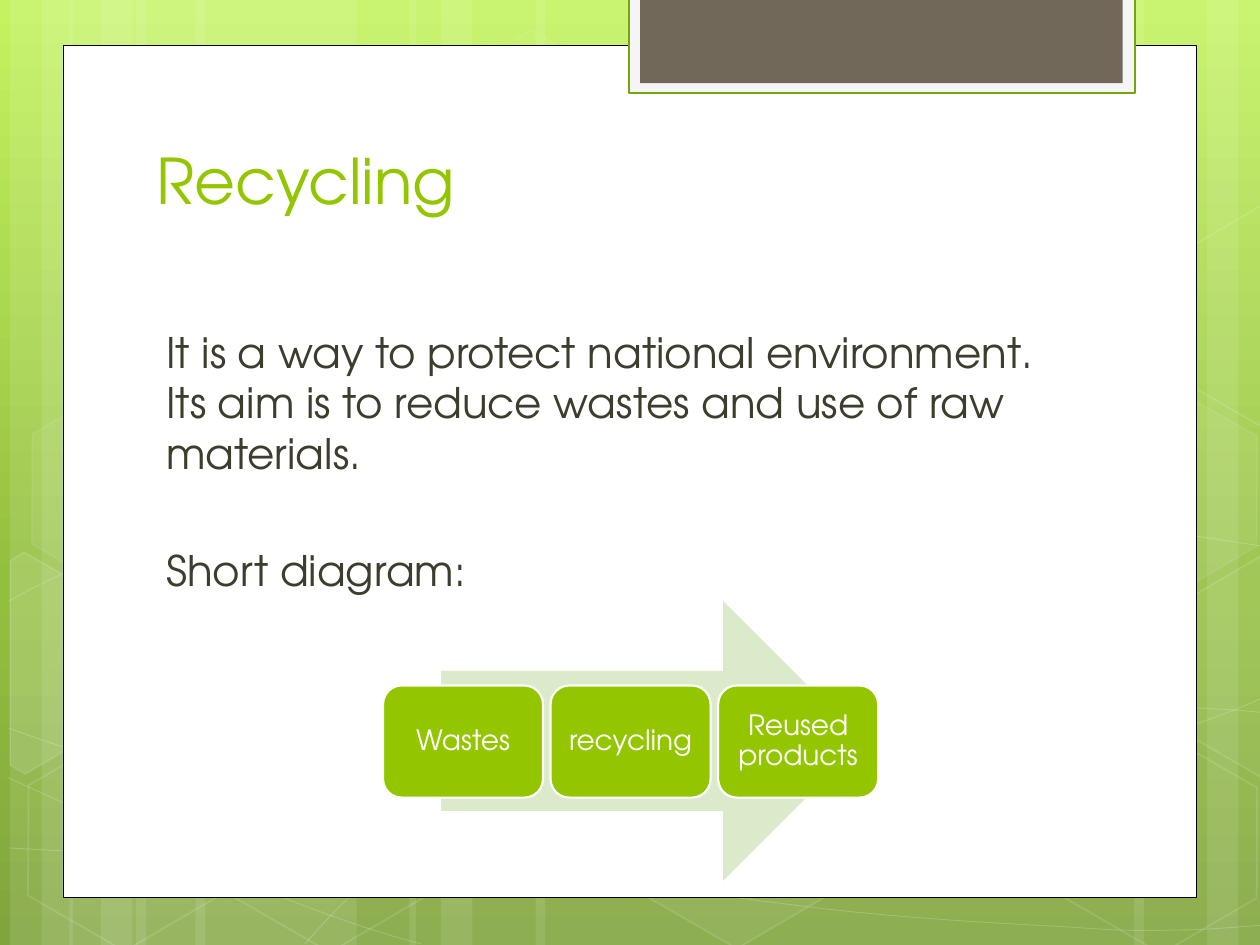
from copy import deepcopy
from math import cos, radians, sin

from lxml import etree
from pptx import Presentation
from pptx.dml.color import RGBColor
from pptx.enum.shapes import MSO_SHAPE
from pptx.enum.text import MSO_ANCHOR, MSO_AUTO_SIZE, PP_ALIGN
from pptx.oxml.ns import qn
from pptx.util import Inches, Pt

RECT, HEX = MSO_SHAPE.RECTANGLE, MSO_SHAPE.HEXAGON
ROUND, ARROW = MSO_SHAPE.ROUNDED_RECTANGLE, MSO_SHAPE.RIGHT_ARROW
TOP, MIDDLE = MSO_ANCHOR.TOP, MSO_ANCHOR.MIDDLE
LEFT, CENTER = PP_ALIGN.LEFT, PP_ALIGN.CENTER
NO_FIT = MSO_AUTO_SIZE.NONE

WHITE = RGBColor(0xFF, 0xFF, 0xFF)
BLACK = RGBColor(0, 0, 0)
GREEN = RGBColor(0x94, 0xC6, 0x00)
PALE = RGBColor(0xDC, 0xEA, 0xCC)
EDGE = RGBColor(0x74, 0xA5, 0x10)
GRAY = RGBColor(0xF5, 0xF5, 0xF5)
BROWN = RGBColor(0x71, 0x68, 0x5A)
INK = RGBColor(0x3E, 0x3D, 0x2D)
SKY = [(0, RGBColor(0xC3, 0xF3, 0x5F)), (0.62, RGBColor(0x93, 0xBF, 0x3F)),
       (1, RGBColor(0x81, 0xA5, 0x3E))]

STRIPES = [(1.08, 1.75), (0.08, 0.5), (0.33, 0.83), (1.55, 1.75), (0.55, 0.5),
           (0.8, 0.83), (7.33, 1.75), (9.58, 0.5), (9, 0.83), (4.25, 3.08),
           (3.25, 0.5), (3.5, 0.83)]
CURVES = [
    ([(0.07, 6.73), (0.61, 6.76), (1.15, 6.79), (1.9, 6.78), (2.65, 6.77),
      (3.58, 6.75), (4.58, 6.65), (5.58, 6.55), (7, 6.36), (7.92, 6.17),
      (8.83, 5.98), (9.77, 5.68), (10.07, 5.51)], "CCCC"),
    ([(0.07, 4.77), (0.36, 4.61), (0.65, 4.46), (1.21, 4.31), (1.78, 4.16),
      (2.59, 3.94), (3.47, 3.87), (4.36, 3.8), (5.44, 3.79), (6.54, 3.87),
      (7.64, 3.95), (9.47, 4.26), (10.07, 4.34)], "CCCC"),
    ([(0.06, 6.17), (1.27, 6.72), (2.47, 7.27), (3.34, 7.49)], "C"),
    ([(0.07, 5.78), (0.38, 5.89), (0.7, 6), (1.28, 6.16), (1.86, 6.31),
      (2.73, 6.56), (3.57, 6.73), (4.4, 6.9), (5.45, 7.08), (6.28, 7.18),
      (7.11, 7.29), (8, 7.33), (8.53, 7.36), (9.05, 7.4), (9.19, 7.38),
      (9.45, 7.38), (9.71, 7.37), (9.89, 7.35), (10.07, 7.34)], "CCCCCC"),
    ([(2.42, 7.49), (2.6, 7.29), (2.78, 7.09), (3.02, 6.91), (3.26, 6.73),
      (3.6, 6.53), (3.88, 6.39), (4.16, 6.25), (4.33, 6.19), (4.7, 6.09),
      (5.06, 5.99), (5.73, 5.85), (6.08, 5.78), (6.44, 5.71), (6.49, 5.71),
      (6.8, 5.69), (7.11, 5.66), (7.6, 5.63), (7.94, 5.62), (8.29, 5.61),
      (8.86, 5.62), (8.86, 5.62), (9.53, 5.62), (9.71, 5.63), (9.88, 5.64),
      (9.97, 5.65), (10.06, 5.66), (10.03, 5.65), (10.06, 5.66)], "CCCCCCCLCC"),
]
HEXES = [(3.34, 0.36, 4, 8), (4.97, 5.89, 6, 12), (0.11, 5.91, 0, 12),
         (0.14, 3.12, 7, 8), (1.74, 5.92, 0, 12), (7.53, 4.53, 10, 12),
         (8.34, 5.93, 0, 12), (8.34, 3.14, 7, 8)]
CUTS = [
    ((0.36, 5.35), 10, [(0.08, 4.45), (0.19, 4.38), (0.96, 4.82), (0.95, 5.7),
                        (0.2, 6.14), (0.08, 6.07)]),
    ((9.85, 5.2), 4, [(9.26, 4.85), (10.01, 4.41), (10.09, 4.46), (10.09, 6.13),
                      (10.02, 6.17), (9.26, 5.73)]),
    ((9.85, 2.41), 0, [(9.26, 2.07), (10.01, 1.63), (10.1, 1.68), (10.09, 3.35),
                       (10.02, 3.39), (9.26, 2.95)]),
]
TILT = 30
STEPS = ["Wastes", "recycling", "Reused products"]


def fade(shape, where, alpha):
    for tint in shape.element.xpath(f"./p:spPr/{where}a:solidFill/a:srgbClr"):
        etree.SubElement(tint, qn("a:alpha")).set("val", str(alpha * 1000))


def write(part, text, size=16, color=WHITE, align=LEFT, anchor=TOP,
          inset=(0.1, 0.05), indent=0, before=0, line=None):
    frame = part.text_frame
    frame.word_wrap, frame.auto_size = True, NO_FIT
    frame.vertical_anchor = anchor
    frame.margin_left = frame.margin_right = Inches(inset[0])
    frame.margin_top = frame.margin_bottom = Inches(inset[1])
    frame.text = text
    for rank, para in enumerate(frame.paragraphs):
        para.alignment, para.line_spacing = align, line
        para.space_before = Pt(before if rank else 0)
        props = para._p.get_or_add_pPr()
        props.set("marL", str(Inches(indent)))
        props.set("indent", "0")
        etree.SubElement(props, qn("a:buNone"))
        font = para.runs[0].font
        font.name, font.size = "TeX Gyre Adventor", Pt(size)
        font.color.rgb = color


def bend(shape, kinds):
    legs = iter(shape.element.xpath(".//a:lnTo"))
    for kind in kinds:
        leg = next(legs)
        if kind == "C":
            leg.tag = qn("a:cubicBezTo")
            for spare in (next(legs), next(legs)):
                leg.append(spare[0])
                spare.getparent().remove(spare)


def turn(points, mid, angle):
    c, s = cos(radians(angle)), sin(radians(angle))
    return [(mid[0] + c * (x - mid[0]) - s * (y - mid[1]),
             mid[1] + s * (x - mid[0]) + c * (y - mid[1])) for x, y in points]


class Deck:
    def __init__(self):
        self.show = Presentation()
        self.show.slide_width, self.show.slide_height = Inches(10), Inches(7.5)
        self.slide = self.show.slides.add_slide(self.show.slide_layouts[1])

    def back(self, stops):
        fill = self.slide.background.fill
        fill.gradient()
        fill.gradient_angle = 270
        rail = self.slide.element.xpath(".//a:gsLst")[0]
        rail.append(deepcopy(rail[0]))
        for stop, (place, color) in zip(fill.gradient_stops, stops):
            stop.position, stop.color.rgb = place, color

    def paint(self, shape, fill=None, line=None, width=1, alpha=100, glow=100):
        shape.shadow.inherit = False
        if fill is None or alpha == 0:
            shape.fill.background()
        else:
            shape.fill.solid()
            shape.fill.fore_color.rgb = fill
            if alpha < 100:
                fade(shape, "", alpha)
        if line is None:
            shape.line.fill.background()
        else:
            shape.line.color.rgb = line
            shape.line.width = Pt(width)
            if glow < 100:
                fade(shape, "a:ln/", glow)
        return shape

    def shape(self, kind, box, **look):
        shape = self.slide.shapes.add_shape(kind, *map(Inches, box))
        return self.paint(shape, **look)

    def hexagon(self, left, top, alpha, glow):
        shape = self.shape(HEX, (left, top, 1.75, 1.52), fill=WHITE, line=WHITE,
                           alpha=alpha, glow=glow)
        shape.rotation = TILT
        shape.adjustments[0] = 0.285

    def outline(self, points, close=False, **look):
        spots = [(Inches(x), Inches(y)) for x, y in points]
        pen = self.slide.shapes.build_freeform(*spots[0])
        pen.add_line_segments(spots[1:], close=close)
        return self.paint(pen.convert_to_shape(), **look)

    def holder(self, index, box, text, **look):
        part = self.slide.placeholders[index]
        part.left, part.top, part.width, part.height = map(Inches, box)
        write(part, text, **look)
        part.element.getparent().append(part.element)


def main():
    deck = Deck()
    deck.back(SKY)
    for left, width in STRIPES:
        deck.shape(RECT, (left, 0, width, 7.5), fill=WHITE, alpha=10)
    for knots, kinds in CURVES:
        bend(deck.outline(knots, line=WHITE, width=0.5, glow=20), kinds)
    for spot in HEXES:
        deck.hexagon(*spot)
    for mid, alpha, points in CUTS:
        cut = deck.outline(turn(points, mid, -TILT), close=True, fill=WHITE,
                           line=WHITE, alpha=alpha, glow=12)
        cut.rotation = TILT

    deck.shape(RECT, (0.5, 0.36, 9, 6.76), fill=WHITE, line=BLACK, width=0.5)
    deck.shape(RECT, (4.99, -0.02, 4.02, 0.76), fill=GRAY, line=EDGE, width=1.25)
    deck.shape(RECT, (5.08, -0.02, 3.83, 0.68), fill=BROWN)

    deck.holder(0, (1.14, 1.12, 7.68, 1.25), "Recycling", size=36, color=GREEN,
                inset=(0.1, 0))
    deck.holder(1, (1.14, 2.54, 7.41, 3.84),
                "It is a way to protect national environment. Its aim is to "
                "reduce wastes and use of raw materials.\nShort diagram:",
                size=24, color=INK, indent=0.08, before=38.4)

    deck.shape(ARROW, (3.5, 4.77, 3.35, 2.22), fill=PALE)
    for rank, name in enumerate(STEPS):
        step = deck.shape(ROUND, (3.04 + 1.33 * rank, 5.44, 1.27, 0.89),
                          fill=GREEN, line=WHITE, width=1.25)
        write(step, name, align=CENTER, anchor=MIDDLE, inset=(0.02, 0.02), line=0.9)
    deck.show.save("out.pptx")


if __name__ == "__main__":
    main()
